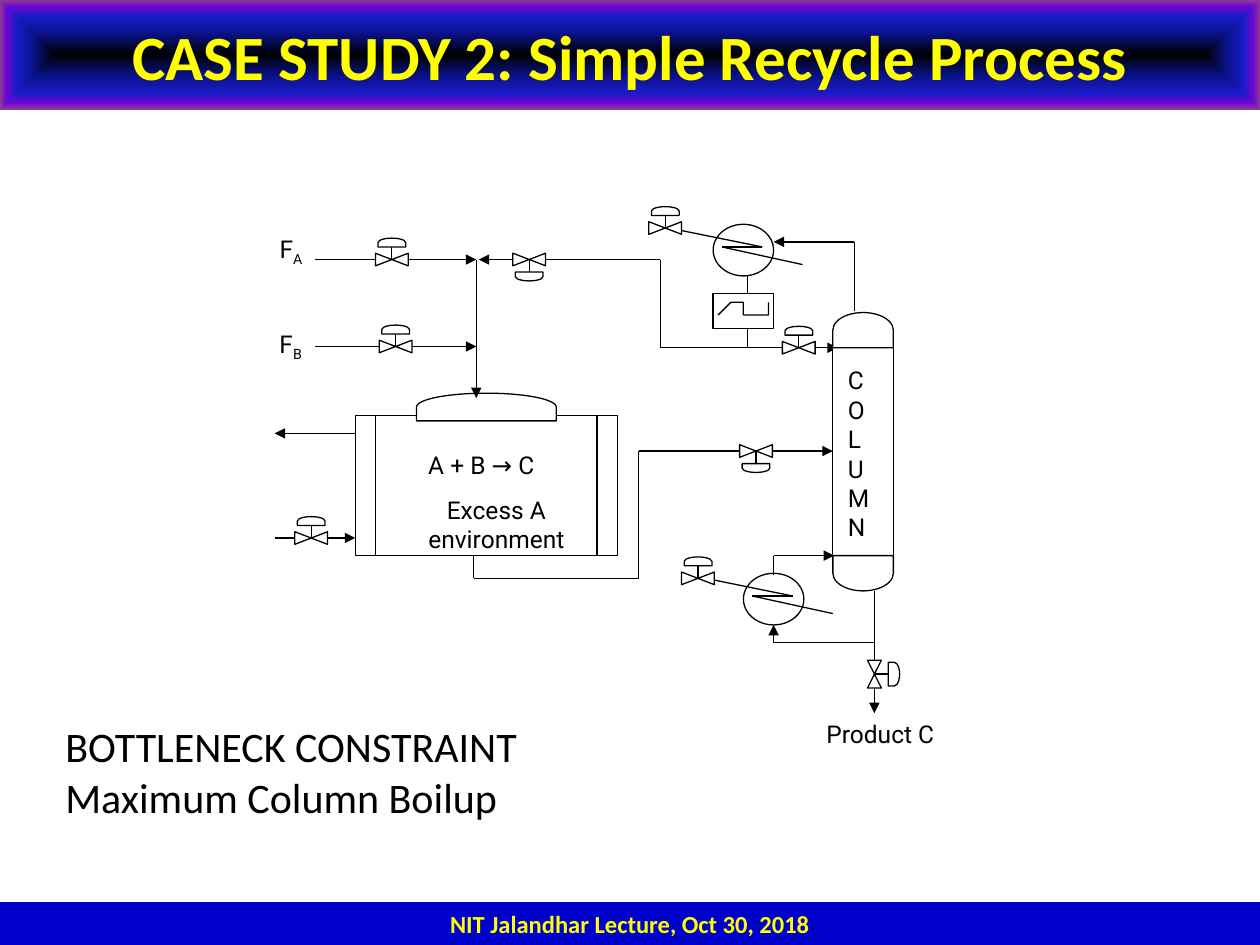
"""Build the slide with the flow diagram of a simple recycle process."""
from math import cos, pi, radians, sin

from lxml.etree import SubElement
from pptx import Presentation
from pptx.dml.color import RGBColor
from pptx.enum.shapes import MSO_CONNECTOR as Connector, MSO_SHAPE as Preset
from pptx.enum.text import MSO_ANCHOR as Anchor, MSO_AUTO_SIZE as AutoSize, PP_ALIGN as Align
from pptx.oxml.ns import qn
from pptx.util import Inches, Pt

COLUMNS, ROWS = 100, 75
COLORS = {"white": "FFFFFF", "black": "000000", "yellow": "FFFF00", "blue": "0000CC"}
TITLE_STOPS = {0: "000000", 40: "0A128C", 70: "181CC7", 88: "7005D4", 100: "8C3D91"}

presentation = Presentation()
presentation.slide_width, presentation.slide_height = Inches(10), Inches(7.5)
column_width = presentation.slide_width // COLUMNS
row_height = presentation.slide_height // ROWS
slide = presentation.slides.add_slide(presentation.slide_layouts[5])


def draw_shape(preset, left, top, width, height, rotation=0, fill="white", line="black"):
    shape = slide.shapes.add_shape(
        preset, round(left * column_width), round(top * row_height),
        round(width * column_width), round(height * row_height))
    shape.rotation = rotation
    shape.shadow.inherit = False
    shape.fill.solid()
    shape.fill.fore_color.rgb = RGBColor.from_string(COLORS[fill])
    shape.line.color.rgb = RGBColor.from_string(COLORS[line])
    shape.line.width = Pt(0.75)
    return shape


def draw_line(points, arrow=False):
    for start, end in zip(points, points[1:]):
        line = slide.shapes.add_connector(
            Connector.STRAIGHT, round(start[0] * column_width), round(start[1] * row_height),
            round(end[0] * column_width), round(end[1] * row_height))
        line.line.color.rgb = RGBColor.from_string(COLORS["black"])
        line.line.width = Pt(0.75)
        SubElement(line._element.spPr, qn("a:effectLst"))
    if arrow:
        SubElement(line.line._get_or_add_ln(), qn("a:tailEnd"), type="triangle")
    return line


draw_line([(52.4, 27.6), (66.5, 27.6)], arrow=True)

draw_shape(Preset.RECTANGLE, 29.8, 33, 17.6, 11.1)
draw_shape(Preset.FLOWCHART_DELAY, 37.5, 26.75, 2.2, 11.1, 270)
for jacket_left in (28.2, 47.4):
    draw_shape(Preset.RECTANGLE, jacket_left, 33, 1.6, 11.1)

column = draw_shape(Preset.RECTANGLE, 66.1, 27.5, 4.8, 16.6)
for cap_top, rotation in ((23.8, 270), (43.1, 90)):
    draw_shape(Preset.FLOWCHART_DELAY, 67.1, cap_top, 2.8, 4.8, rotation)

draw_shape(Preset.RECTANGLE, 56.6, 23.3, 4.8, 2.8)
wave_points = [(56.6 + 0.2 * step, 24.55 + 0.15 * cos(pi * step / 8)) for step in range(25)]
wave_builder = slide.shapes.build_freeform(*wave_points[0], scale=(column_width, row_height))
wave_builder.add_line_segments(wave_points[1:], close=False)
wave = wave_builder.convert_to_shape()
wave.shadow.inherit = False
wave.fill.background()
wave.line.color.rgb = RGBColor.from_string(COLORS["black"])
wave.line.width = Pt(0.75)

for left, top in ((56.6, 17.8), (59, 45.5)):
    draw_shape(Preset.OVAL, left, top, 4.8, 4.1)
    draw_line([(left + across, top + down)
               for across, down in ((-2.5, 0.5), (3.9, 1.8), (0.7, 1.8), (7.1, 3.2))])

feed = draw_line([(50.7, 35.8), (66.1, 35.8)], arrow=True)
feed.end_connect(column, 1)

arrow_streams = [
    [(25, 20.6), (37.8, 20.6)],
    [(25, 27.5), (37.8, 27.5)],
    [(37.8, 20.6), (37.8, 31.6)],
    [(52.4, 20.6), (38, 20.6)],
    [(21.8, 42.7), (28.2, 42.7)],
    [(28.2, 34.4), (21.8, 34.4)],
    [(67.8, 24.7), (67.8, 19.2), (61.4, 19.2)],
    [(69.4, 46.9), (69.4, 56.6)],
    [(69.4, 51), (61.4, 51), (61.4, 49.6)],
    [(61.4, 45.6), (61.4, 44.1), (66.2, 44.1)],
]
plain_streams = [
    [(52.4, 20.6), (52.4, 27.6)],
    [(37.6, 44.1), (37.6, 45.9), (50.7, 45.9), (50.7, 35.8)],
    [(59.3, 21.9), (59.3, 23.3)],
    [(59.3, 26.1), (59.3, 27.5)],
]
for streams, arrow in ((arrow_streams, True), (plain_streams, False)):
    for points in streams:
        draw_line(points, arrow)

small, large = (1, 2.6, 0.7, 2.2), (1.1, 2.2, 0.9, 1.9)
valves = [
    (31.1, 20.6, 270, small), (31.4, 27.5, 270, small), (24.7, 42.7, 270, small),
    (42, 20.6, 90, small), (60, 35.8, 90, small), (63.4, 27.6, 270, small),
    (52.8, 18.1, 270, small), (55.4, 45.9, 270, small), (69.4, 53.5, 0, large),
]
for x, y, rotation, (body_width, body_height, cap_width, cap_height) in valves:
    across, down = cos(radians(rotation)), sin(radians(rotation))
    stem = body_width
    cap_x, cap_y = x + across * (stem + cap_width / 2), y + down * (stem + cap_width / 2)
    draw_shape(Preset.FLOWCHART_COLLATE, x - body_width / 2, y - body_height / 2,
               body_width, body_height, rotation)
    draw_shape(Preset.FLOWCHART_DELAY, cap_x - cap_width / 2, cap_y - cap_height / 2,
               cap_width, cap_height, rotation)
    draw_line([(x, y), (x + across * stem, y + down * stem)])

title = slide.shapes.title
title_format = {"left": 0, "top": 0, "width": presentation.slide_width,
                "height": round(8.7 * row_height)}
for name, value in title_format.items():
    setattr(title, name, value)
gradient = SubElement(title._element.spPr, qn("a:gradFill"), rotWithShape="1")
stop_list = SubElement(gradient, qn("a:gsLst"))
for position, color in TITLE_STOPS.items():
    stop = SubElement(stop_list, qn("a:gs"), pos=str(position * 1000))
    SubElement(stop, qn("a:srgbClr"), val=color)
gradient_shape = SubElement(gradient, qn("a:path"), path="rect")
SubElement(gradient_shape, qn("a:fillToRect"), l="50000", t="50000", r="50000", b="50000")

footer = draw_shape(Preset.RECTANGLE, 0, 71.6, COLUMNS, 3.4, fill="blue", line="blue")
footer.line.fill.background()

heading_font = {"name": "Calibri", "size": Pt(36), "bold": True}
footer_font = {"name": "Calibri", "size": Pt(14), "bold": True}
note_font = {"name": "Calibri", "size": Pt(24)}
label_font = {"name": "Roboto", "size": Pt(14)}
texts = [
    (title, [["CASE STUDY 2: Simple Recycle Process"]], heading_font, "yellow"),
    (footer, [["NIT Jalandhar Lecture, Oct 30, 2018"]], footer_font, "yellow"),
    ((4.2, 56.7, 48, 9.1), [["BOTTLENECK CONSTRAINT"], ["Maximum Column Boilup"]],
     note_font, "black"),
    ((33, 35.2, 12.8, 11.1), [["A + B → C"], ["Excess A environment"]], label_font, "black"),
    ((21.2, 18.1, 5.1, 4.2), [["F", "A"]], label_font, "black"),
    ((21.2, 25.6, 6.3, 4.1), [["F", "B"]], label_font, "black"),
    ((66.3, 28.5, 4.8, 13.8), [[letter] for letter in "COLUMN"], label_font, "black"),
    ((64.6, 56.6, 11.2, 3.2), [["Product C"]], label_font, "black"),
]
for place, lines, font_format, color in texts:
    shape = place
    if isinstance(place, tuple):
        left, top, width, height = place
        shape = slide.shapes.add_textbox(
            round(left * column_width), round(top * row_height),
            round(width * column_width), round(height * row_height))
    frame = shape.text_frame
    frame.word_wrap = font_format is not note_font
    frame.auto_size = AutoSize.NONE
    frame.vertical_anchor = Anchor.TOP if color == "black" else Anchor.MIDDLE
    for index, runs in enumerate(lines):
        paragraph = frame.add_paragraph() if index else frame.paragraphs[0]
        paragraph.alignment = Align.LEFT if color == "black" else Align.CENTER
        if runs == ["Excess A environment"]:
            paragraph.alignment, paragraph.space_before = Align.CENTER, Pt(9)
        for run_index, text in enumerate(runs):
            run = paragraph.add_run()
            run.text = text
            run.font.color.rgb = RGBColor.from_string(COLORS[color])
            for name, value in font_format.items():
                setattr(run.font, name, value)
            if run_index:
                run.font._element.set("baseline", "-25000")

presentation.save("out.pptx")
